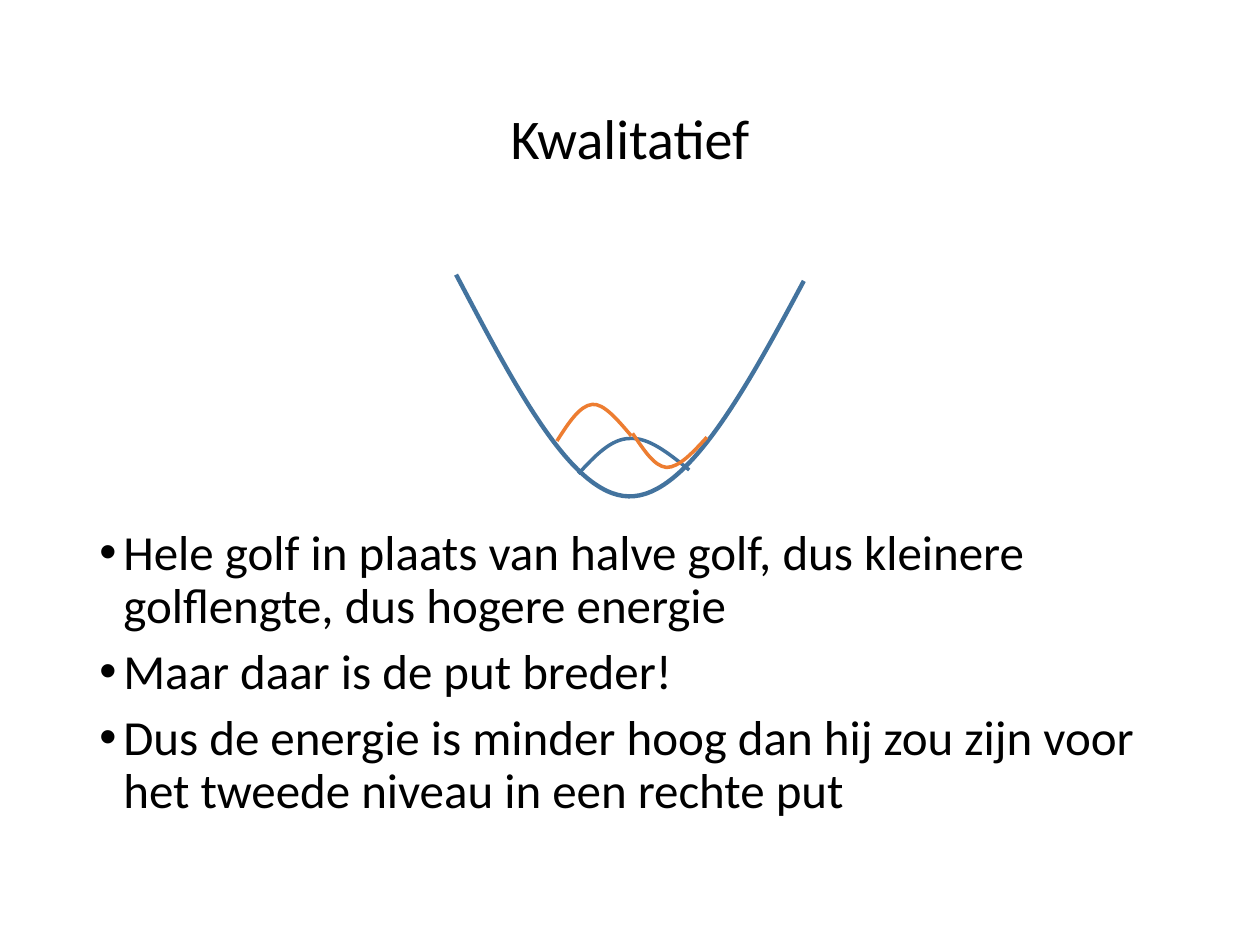
from lxml.etree import SubElement
from pptx import Presentation
from pptx.dml.color import RGBColor
from pptx.enum.text import MSO_ANCHOR, PP_ALIGN
from pptx.oxml.ns import qn
from pptx.util import Inches, Pt

BLACK, BLUE, ORANGE = "000000", "43739E", "ED7D31"
FONT = "Calibri"
CONCLUSIONS = (
    "Hele golf in plaats van halve golf, dus kleinere golflengte, dus hogere energie",
    "Maar daar is de put breder!",
    "Dus de energie is minder hoog dan hij zou zijn voor het tweede niveau in een rechte put",
)
WELL = ((0, 0), (0.46, 0.87), (0.91, 1.75), (1.37, 1.76),
        (1.83, 1.77), (2.3, 0.91), (2.76, 0.05))
HALF_WAVE = ((0.97, 1.58), (1.1, 1.44), (1.23, 1.3), (1.38, 1.3),
             (1.53, 1.29), (1.69, 1.42), (1.85, 1.55))
WAVE_CREST = ((0.8, 1.32), (0.89, 1.18), (0.98, 1.04), (1.08, 1.03),
              (1.17, 1.02), (1.28, 1.15), (1.39, 1.28))
WAVE_TROUGH = ((1.4, 1.26), (1.49, 1.39), (1.57, 1.52), (1.67, 1.53),
               (1.77, 1.53), (1.88, 1.41), (1.99, 1.29))


def color(hex_code):
    """Return the colour for a hex string."""
    return RGBColor.from_string(hex_code)


def add_run(paragraph, text, size):
    """Add one black run of the slide's font."""
    paragraph.line_spacing = 0.9
    run = paragraph.add_run()
    run.text = text
    run.font.name = FONT
    run.font.size = Pt(size)
    run.font.color.rgb = color(BLACK)


def place_title(slide, left, top, width, height):
    """Place and format the title."""
    title = slide.shapes.title
    title.left, title.top = Inches(left), Inches(top)
    title.width, title.height = Inches(width), Inches(height)
    frame = title.text_frame
    frame.vertical_anchor = MSO_ANCHOR.MIDDLE
    paragraph = frame.paragraphs[0]
    paragraph.alignment = PP_ALIGN.CENTER
    add_run(paragraph, "Kwalitatief", 32)


def draw_curve(slide, left, top, points, line_color, weight):
    """Draw a cubic Bézier curve through points relative to left and top."""
    placed = [(Inches(left + x), Inches(top + y)) for x, y in points]
    builder = slide.shapes.build_freeform(*placed[0])
    builder.add_line_segments(placed[1:], close=False)
    curve = builder.convert_to_shape()
    outline = next(curve.element.iter(qn("a:path")))
    segments = outline.findall(qn("a:lnTo"))
    for first in range(0, len(segments), 3):
        bezier = SubElement(outline, qn("a:cubicBezTo"))
        for segment in segments[first:first + 3]:
            bezier.append(segment[0])
            outline.remove(segment)
    curve.shadow.inherit = False
    curve.fill.background()
    curve.line.color.rgb = color(line_color)
    curve.line.width = Pt(weight)


def place_well(slide, left, top):
    """Draw the potential well with its two lowest waves."""
    for points, line_color, weight in (
        (WELL, BLUE, 2.5),
        (HALF_WAVE, BLUE, 2),
        (WAVE_CREST, ORANGE, 2),
        (WAVE_TROUGH, ORANGE, 2),
    ):
        draw_curve(slide, left, top, points, line_color, weight)


def place_conclusions(slide, left, top, width, height):
    """Place the bulleted conclusions."""
    conclusions = slide.shapes.add_textbox(
        Inches(left), Inches(top), Inches(width), Inches(height))
    frame = conclusions.text_frame
    frame.word_wrap = True
    for index, text in enumerate(CONCLUSIONS):
        paragraph = frame.add_paragraph() if index else frame.paragraphs[0]
        if index:
            paragraph.space_before = Pt(7.5)
        add_run(paragraph, text, 28)
        properties = paragraph._p.get_or_add_pPr()
        properties.set("marL", str(Inches(0.19)))
        properties.set("indent", str(Inches(-0.19)))
        SubElement(properties, qn("a:buFont"), typeface="Arial")
        SubElement(properties, qn("a:buChar"), char="•")


def main():
    """Build and save the slide."""
    deck = Presentation()
    deck.slide_width, deck.slide_height = Inches(10), Inches(7.5)
    slide = deck.slides.add_slide(deck.slide_layouts[5])
    place_title(slide, 0.69, 0.4, 8.62, 1.45)
    place_conclusions(slide, 0.69, 4.14, 8.62, 2.62)
    place_well(slide, 3.62, 2.18)
    deck.save("out.pptx")


if __name__ == "__main__":
    main()
